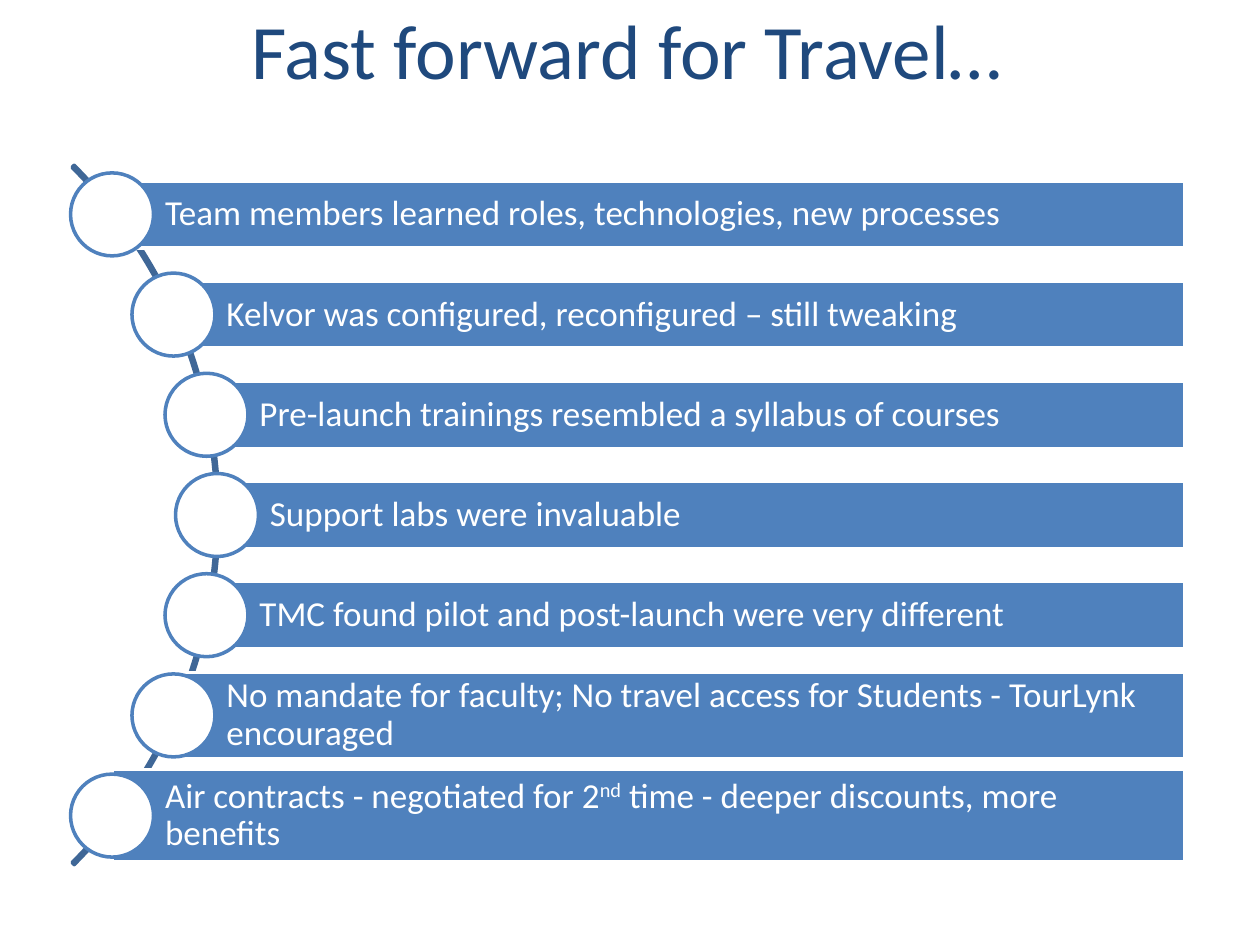
from math import sqrt
from pptx import Presentation
from pptx.dml.color import RGBColor
from pptx.enum.shapes import MSO_SHAPE
from pptx.enum.text import MSO_ANCHOR, PP_ALIGN
from pptx.util import Pt

RECT, OVAL, ARC = MSO_SHAPE.RECTANGLE, MSO_SHAPE.OVAL, MSO_SHAPE.BLOCK_ARC
MIDDLE = MSO_ANCHOR.MIDDLE
LEFT, CENTER = PP_ALIGN.LEFT, PP_ALIGN.CENTER
NAVY = RGBColor(0x1F, 0x49, 0x7D)
BLUE = RGBColor(0x4F, 0x81, 0xBD)
STEEL = RGBColor(0x3F, 0x67, 0x97)
WHITE = RGBColor(0xFF, 0xFF, 0xFF)
FONT = "Calibri"
SCALE = 914400 / 126

ROWS = [
    ("Team members learned roles, technologies, new processes", 67),
    ("Kelvor was configured, reconfigured – still tweaking", 67),
    ("Pre-launch trainings resembled a syllabus of courses", 67),
    ("Support labs were invaluable", 67),
    ("TMC found pilot and post-launch were very different", 67),
    ("No mandate for faculty; No travel access for Students - TourLynk encouraged", 86),
    ("Air contracts - negotiated for 2^nd^ time - deeper discounts, more benefits", 92),
]


def px(*sizes):
    """Turn pixel lengths into EMU."""
    return [round(size * SCALE) for size in sizes]


def style(font, size, color):
    """Set the face, size and colour of a font."""
    font.name, font.size = FONT, Pt(size)
    font.color.rgb = color


def add_shape(slide, kind, box, fill, line):
    """Add a flat shape with a two-point outline."""
    shape = slide.shapes.add_shape(kind, *px(*box))
    shape.shadow.inherit = False
    if fill is None:
        shape.fill.background()
    else:
        shape.fill.solid()
        shape.fill.fore_color.rgb = fill
    shape.line.color.rgb = line
    shape.line.width = Pt(2)
    return shape


def add_title(slide, box, text):
    """Write the centred slide title."""
    frame = slide.shapes.add_textbox(*px(*box)).text_frame
    frame.word_wrap = True
    frame.vertical_anchor = MIDDLE
    para = frame.paragraphs[0]
    para.text = text
    para.alignment = CENTER
    style(para.runs[0].font, 44, NAVY)


def add_label(bar, text):
    """Write a bar's text, raising the parts between carets."""
    frame = bar.text_frame
    frame.word_wrap = True
    frame.vertical_anchor = MIDDLE
    frame.margin_left, pad = px(53, 8)
    frame.margin_right = frame.margin_top = frame.margin_bottom = pad
    para = frame.paragraphs[0]
    para.alignment = LEFT
    para.line_spacing = 0.9
    for i, part in enumerate(text.split("^")):
        run = para.add_run()
        run.text = part
        style(run.font, 20, WHITE)
        if i % 2:
            run._r.get_or_add_rPr().set("baseline", "30000")


def add_list(slide, box, rows):
    """Draw bars and dots strung along an arc at the left of the box."""
    left, top, width, height = box
    mid = top + height / 2
    size, dot, radius, step = 989, 83, 483, 100.2
    arc = add_shape(slide, ARC, (left - 840, mid - size / 2, size, size), None, STEEL)
    for i, value in enumerate((189, 27, 0.003)):
        arc.adjustments[i] = value
    for i, (text, tall) in enumerate(rows):
        rise = (i - (len(rows) - 1) / 2) * step
        x = left - 336 + sqrt(radius ** 2 - rise ** 2)
        y = mid + rise
        bar = add_shape(slide, RECT, (x, y - tall / 2, left + width - x, tall), BLUE, WHITE)
        add_label(bar, text)
        add_shape(slide, OVAL, (x - dot / 2, y - dot / 2, dot, dot), WHITE, BLUE)


def main():
    """Build and save the slide."""
    deck = Presentation()
    deck.slide_width, deck.slide_height = px(1260, 945)
    slide = deck.slides.add_slide(deck.slide_layouts[6])
    add_title(slide, (60, 0, 1134, 98), "Fast forward for Travel…")
    add_list(slide, (70, 165, 1115, 700), ROWS)
    deck.save("out.pptx")


if __name__ == "__main__":
    main()
